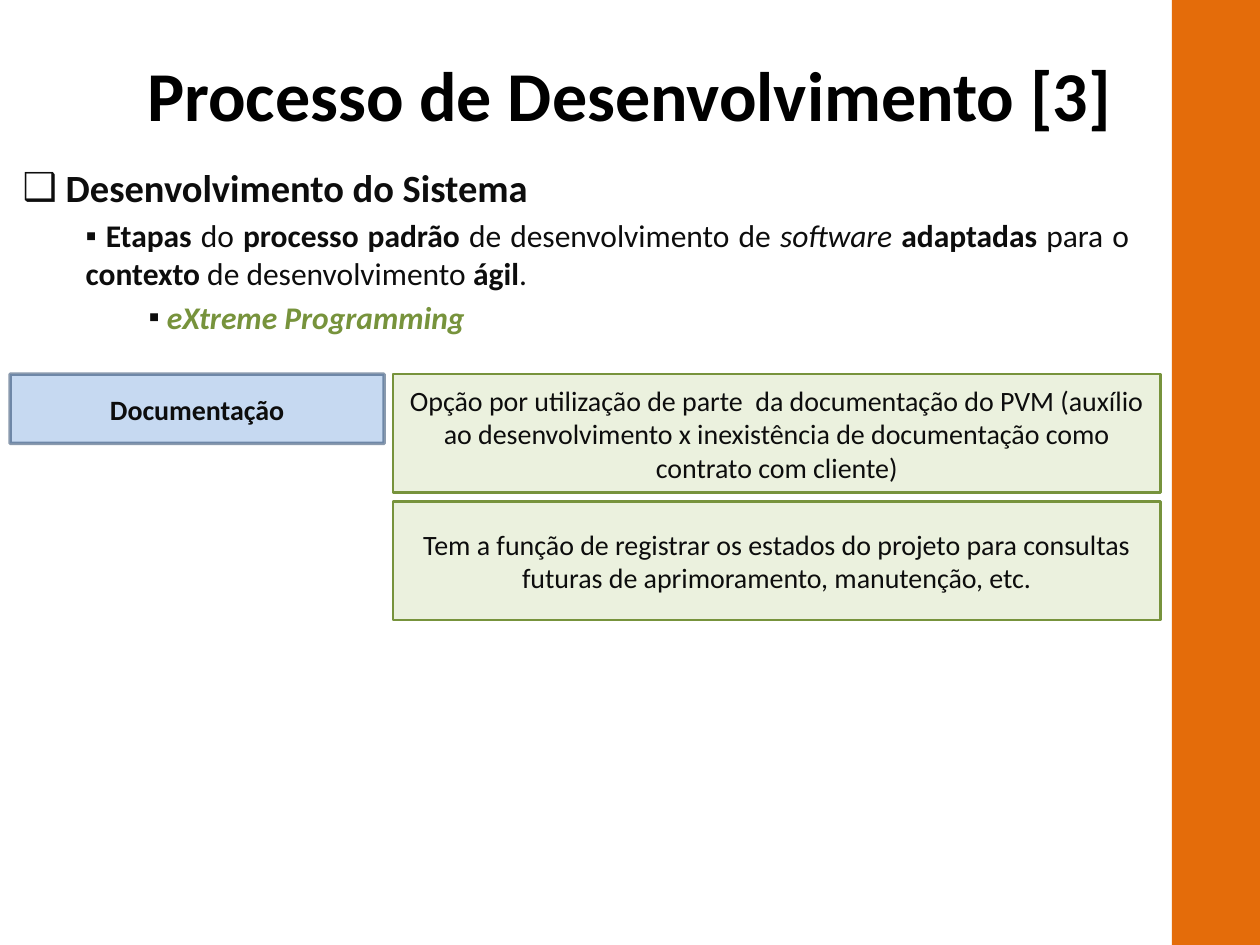
import pptx
import pptx.util
import pptx.dml.color
import pptx.enum.shapes
import pptx.enum.text
import pptx.oxml.ns
import lxml.etree

Inches = pptx.util.Inches
Pt = pptx.util.Pt
RGBColor = pptx.dml.color.RGBColor
ALIGN = pptx.enum.text.PP_ALIGN
MIDDLE = pptx.enum.text.MSO_ANCHOR.MIDDLE
RECT = pptx.enum.shapes.MSO_SHAPE.RECTANGLE
qn = pptx.oxml.ns.qn

BLACK = RGBColor(0x00, 0x00, 0x00)
INK = RGBColor(0x0D, 0x0D, 0x0D)
ORANGE = RGBColor(0xE4, 0x6C, 0x0A)
GREEN = RGBColor(0x77, 0x93, 0x3C)
PALE = RGBColor(0xEB, 0xF1, 0xDE)
SKY = RGBColor(0xC6, 0xD9, 0xF1)
NAVY = RGBColor(0x17, 0x37, 0x5E)


def style(font, color, **values):
    for name, value in {"name": "Calibri", **values}.items():
        setattr(font, name, value)
    font.color.rgb = color


def place(shape, left, top, width, height):
    sides = {"left": left, "top": top, "width": width, "height": height}
    for name, value in sides.items():
        setattr(shape, name, Inches(value))


deck = pptx.Presentation()
deck.slide_width, deck.slide_height = Inches(10), Inches(7.5)
slide = deck.slides.add_slide(deck.slide_layouts[0])
title, body = slide.placeholders

# Title
place(title, 0.23, 0.16, 9.53, 1.17)
title.text_frame.text = "Processo de Desenvolvimento [3]"
title.text_frame.vertical_anchor = MIDDLE
head = title.text_frame.paragraphs[0]
head.alignment = ALIGN.CENTER
style(head.runs[0].font, BLACK, size=Pt(40), bold=True)

# Bulleted list: bullet, size, runs of (text, bold, italic, color)
items = [
    ("❑", 22, [(" Desenvolvimento do Sistema", True, False, INK)]),
    ("▪", 18, [
        (" ", False, False, INK),
        ("Etapas", True, False, INK),
        (" do ", False, False, INK),
        ("processo padrão", True, False, INK),
        (" de desenvolvimento de ", False, False, INK),
        ("software ", False, True, INK),
        ("adaptadas", True, False, INK),
        (" para o ", False, False, INK),
        ("contexto", True, False, INK),
        (" de desenvolvimento ", False, False, INK),
        ("ágil", True, False, INK),
        (".", False, False, INK),
    ]),
    ("▪", 18, [
        (" ", False, True, INK),
        ("eXtreme Programming", True, True, GREEN),
    ]),
]
place(body, 0.08, 1.25, 8.98, 5.94)
frame = body.text_frame
frame.auto_size = pptx.enum.text.MSO_AUTO_SIZE.NONE
for level, (mark, size, runs) in enumerate(items):
    para = frame.add_paragraph() if level else frame.paragraphs[0]
    para.level = level
    para.alignment = ALIGN.JUSTIFY
    para.space_before = Pt(0.2 * size if level else 0)
    props = para._p.get_or_add_pPr()
    props.set("marL", str(Inches(0.5 * level)))
    props.set("indent", "0")
    lxml.etree.SubElement(props, qn("a:buFont")).set("typeface", "Arial")
    lxml.etree.SubElement(props, qn("a:buChar")).set("char", mark)
    for text, bold, italic, color in runs:
        run = para.add_run()
        run.text = text
        style(run.font, color, size=Pt(size), bold=bold, italic=italic)

# Side bar, a wide strip turned upright
bar = slide.shapes.add_shape(RECT, Inches(5.9), Inches(3.4), Inches(7.5), Inches(0.7))
bar.rotation = 90
bar.shadow.inherit = False
bar.fill.solid()
bar.fill.fore_color.rgb = ORANGE
bar.line.fill.background()

# Topic box and its notes: place, text, fill, line, line width, bold
top, tall, gap = 2.97, 0.94, 0.07
boxes = [
    ((0.08, top, 2.97, 0.55), "Documentação", SKY, NAVY, 2, True),
    ((3.12, top, 6.09, tall),
     "Opção por utilização de parte  da documentação do PVM (auxílio ao "
     "desenvolvimento x inexistência de documentação como contrato com cliente)",
     PALE, GREEN, 1.5, False),
    ((3.12, top + tall + gap, 6.09, tall),
     "Tem a função de registrar os estados do projeto para consultas "
     "futuras de aprimoramento, manutenção, etc.",
     PALE, GREEN, 1.5, False),
]
for spot, text, fill, edge, width, bold in boxes:
    box = slide.shapes.add_shape(RECT, *map(Inches, spot))
    box.shadow.inherit = False
    box.fill.solid()
    box.fill.fore_color.rgb = fill
    box.line.color.rgb = edge
    box.line.width = Pt(width)
    if edge == NAVY:  # half-transparent outline
        tint = box.line._ln.find(".//" + qn("a:srgbClr"))
        lxml.etree.SubElement(tint, qn("a:alpha")).set("val", "50000")
    box.text_frame.word_wrap = True
    box.text_frame.vertical_anchor = MIDDLE
    box.text_frame.text = text
    para = box.text_frame.paragraphs[0]
    para.alignment = ALIGN.CENTER
    style(para.runs[0].font, INK, size=Pt(16), bold=bold)

deck.save("out.pptx")
